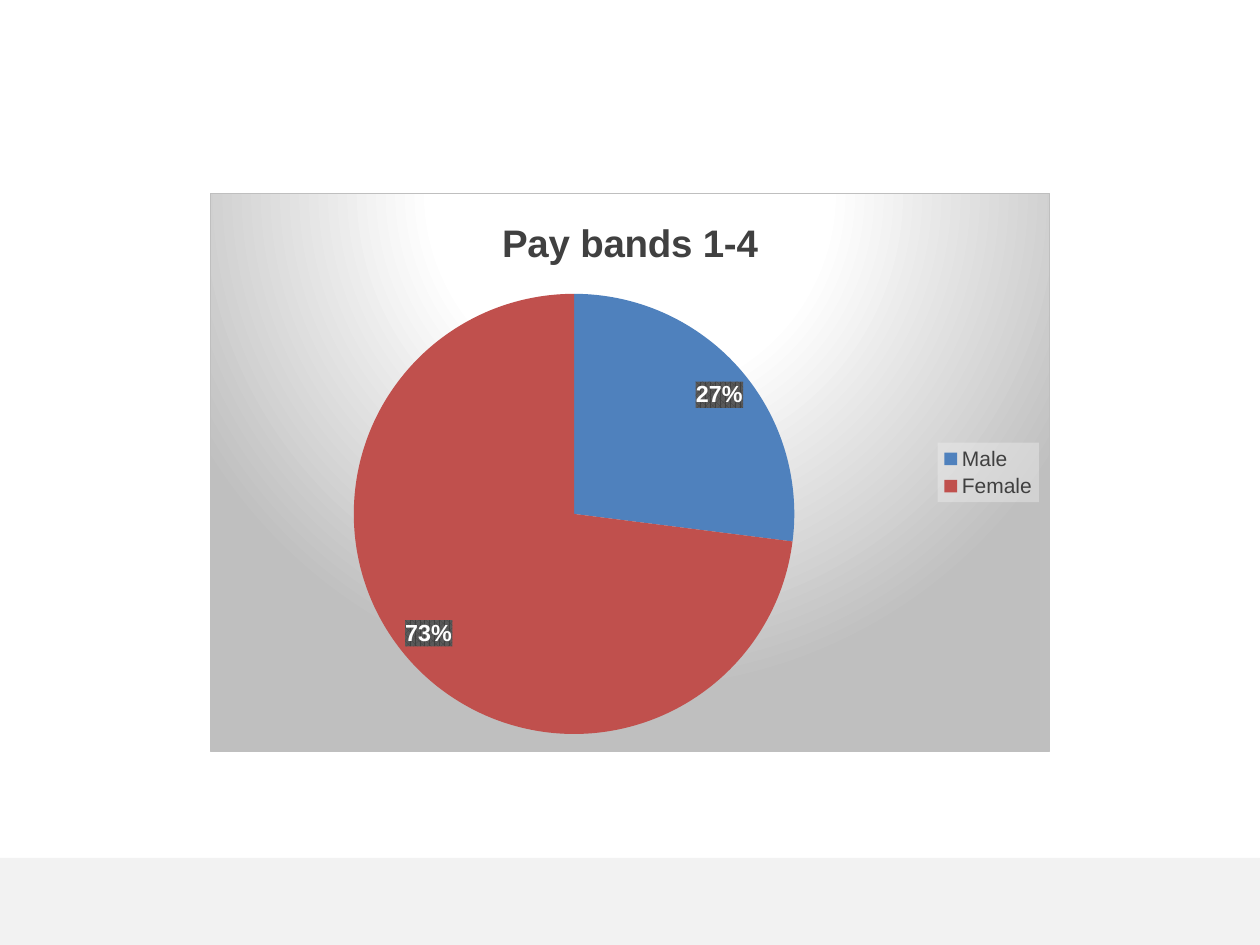
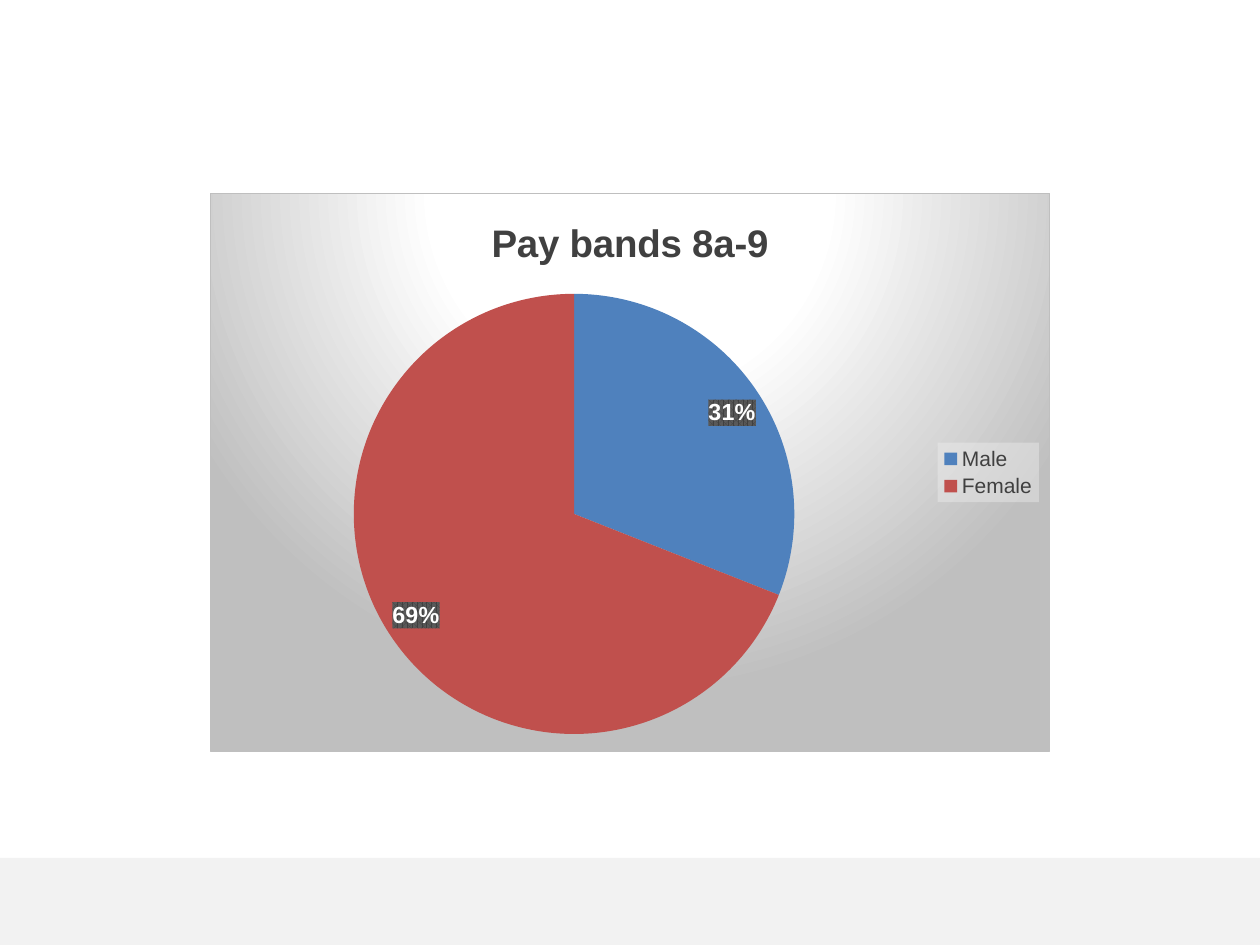
import pptx
import pptx.chart.data
import pptx.dml.color
import pptx.enum.chart
import pptx.enum.shapes
import pptx.oxml
import pptx.oxml.ns
import pptx.util

RGB = pptx.dml.color.RGBColor
BAND = RGB(0xF2, 0xF2, 0xF2)
WHITE = RGB(0xFF, 0xFF, 0xFF)
SILVER = RGB(0xBF, 0xBF, 0xBF)
GREY = RGB(0x59, 0x59, 0x59)
DARK = RGB(0x40, 0x40, 0x40)
BLACK = RGB(0, 0, 0)
BLUE = RGB(0x4F, 0x81, 0xBD)
RED = RGB(0xC0, 0x50, 0x4D)

FONT = "Arial"
WIDE, HIGH = 1260, 945
BAND_TOP = 858
GROUPS = {"Male": BLUE, "Female": RED}
CHARTS = [("Pay bands 1-4", (27, 73)), ("Pay bands 8a-9", (31, 69))]


def px(count):
    """Turn px into EMU at 126 px to the inch."""
    return pptx.util.Emu(round(count * 914400 / 126))


def color(rgb, alpha=100):
    return f'<a:srgbClr val="{rgb}"><a:alpha val="{alpha * 1000}"/></a:srgbClr>'


def solid(rgb, alpha=100):
    return f"<a:solidFill>{color(rgb, alpha)}</a:solidFill>"


def frame(fill, line="<a:ln><a:noFill/></a:ln>"):
    """Make the fill and border element of a chart part."""
    names = pptx.oxml.ns.nsdecls("c", "a")
    return pptx.oxml.parse_xml(f"<c:spPr {names}>{fill}{line}</c:spPr>")


def glow():
    """Make a round gradient whose centre lies above the chart."""
    stops = "".join(
        f'<a:gs pos="{pos * 1000}">{color(rgb)}</a:gs>'
        for pos, rgb in ((0, WHITE), (39, WHITE), (100, SILVER)))
    return (f'<a:gradFill><a:gsLst>{stops}</a:gsLst><a:path path="circle">'
            '<a:fillToRect l="50000" t="-80000" r="50000" b="180000"/>'
            "</a:path></a:gradFill>")


class Deck:
    def __init__(self):
        self.show = pptx.Presentation()
        self.show.slide_width, self.show.slide_height = px(WIDE), px(HIGH)
        self.slide = None

    def page(self):
        self.slide = self.show.slides.add_slide(self.show.slide_layouts[6])
        self.band()

    def band(self):
        bar = self.slide.shapes.add_shape(
            pptx.enum.shapes.MSO_SHAPE.RECTANGLE,
            0, px(BAND_TOP), px(WIDE), px(HIGH - BAND_TOP))
        bar.shadow.inherit = False
        bar.fill.solid()
        bar.fill.fore_color.rgb = BAND
        bar.line.fill.background()

    def style(self, font, size, rgb, bold=False):
        font.name, font.size, font.bold = FONT, pptx.util.Pt(size), bold
        font.color.rgb = rgb

    def pie(self, title, values, left, top, width, height):
        data = pptx.chart.data.CategoryChartData()
        data.categories = list(GROUPS)
        data.add_series("Series 1", values)
        chart = self.slide.shapes.add_chart(
            pptx.enum.chart.XL_CHART_TYPE.PIE,
            px(left), px(top), px(width), px(height), data).chart
        self.style(chart.font, 10, BLACK)
        edge = f'<a:ln w="9525">{solid(SILVER)}</a:ln>'
        chart._chartSpace.chart.addnext(frame(glow(), edge))

        chart.has_title = True
        text = chart.chart_title.text_frame
        text.text = title
        self.style(text.paragraphs[0].runs[0].font, 22, DARK, True)
        chart.plots[0].vary_by_categories = True
        series = chart.plots[0].series[0]
        for spot, rgb in enumerate(GROUPS.values()):
            fill = series.points[spot].format.fill
            fill.solid()
            fill.fore_color.rgb = rgb
        self.labels(series.data_labels)
        self.legend(chart)

    def labels(self, labels):
        labels.show_value = False
        labels.show_percentage = True
        labels.number_format = "0%"
        labels.number_format_is_linked = False
        labels.position = pptx.enum.chart.XL_LABEL_POSITION.BEST_FIT
        self.style(labels.font, 13.3, WHITE, True)
        weave = (f'<a:pattFill prst="pct75"><a:fgClr>{color(DARK)}</a:fgClr>'
                 f"<a:bgClr>{color(GREY)}</a:bgClr></a:pattFill>")
        self.back(labels, weave)

    def legend(self, chart):
        chart.has_legend = True
        legend = chart.legend
        legend.position = pptx.enum.chart.XL_LEGEND_POSITION.RIGHT
        legend.include_in_layout = False
        self.style(legend.font, 12, DARK)
        self.back(legend, solid(BAND, 39))

    def back(self, part, fill):
        """Put a fill behind the text of a chart part."""
        text = part._element.find(pptx.oxml.ns.qn("c:txPr"))
        text.addprevious(frame(fill))


def main():
    deck = Deck()
    for title, values in CHARTS:
        deck.page()
        deck.pie(title, values, 210, 193, 840, 559)
    deck.show.save("out.pptx")


if __name__ == "__main__":
    main()
